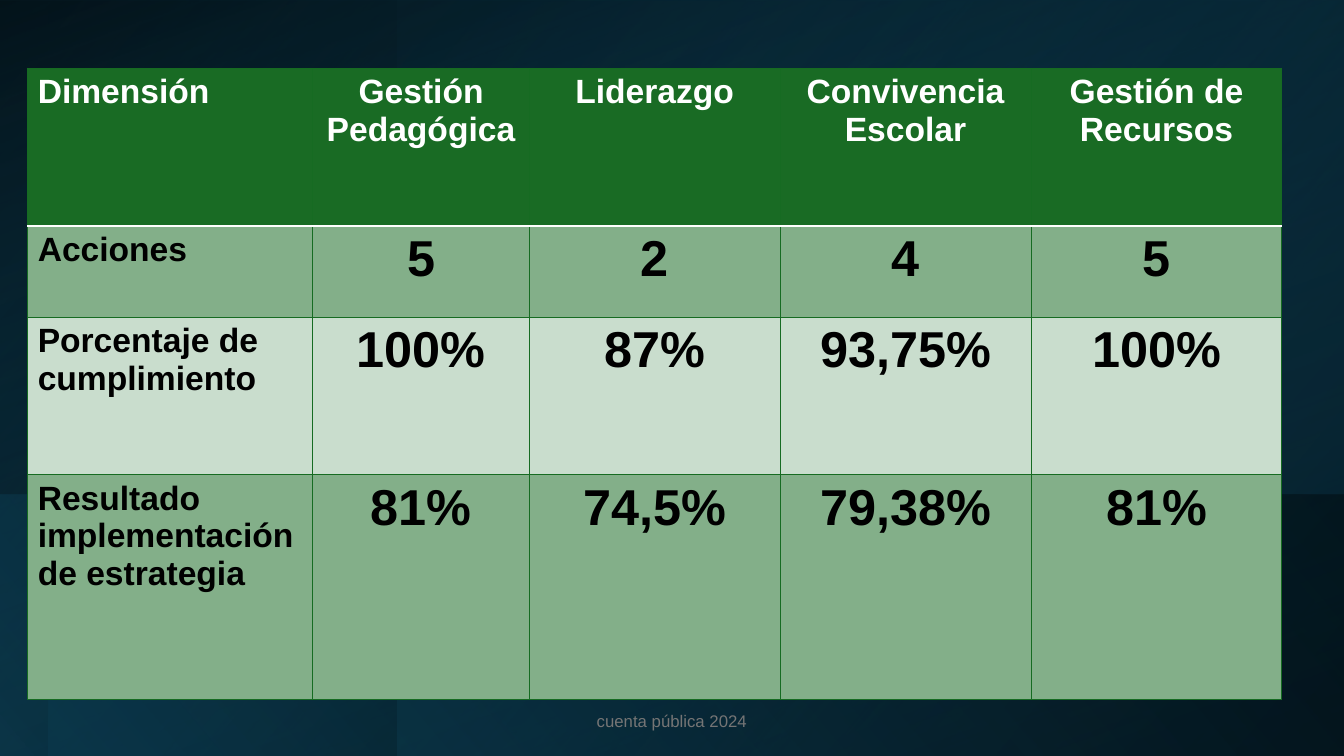
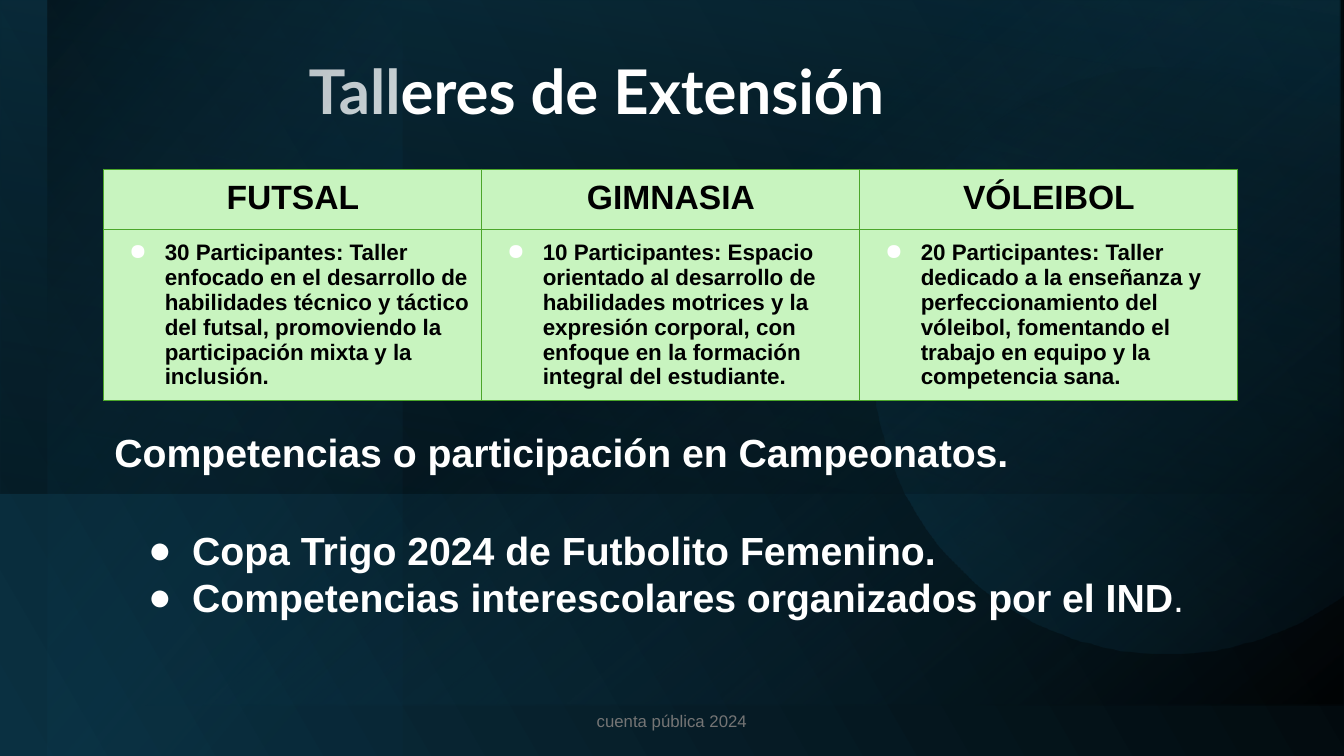
"""Build two slides of a school's public account: management results and extension workshops."""
from dataclasses import dataclass
from math import cos, radians, sin

from lxml.etree import SubElement
from pptx import Presentation
from pptx.dml.color import RGBColor
from pptx.enum.shapes import MSO_SHAPE as Shape
from pptx.enum.text import MSO_ANCHOR as Anchor, MSO_AUTO_SIZE as AutoSize, PP_ALIGN as Align
from pptx.oxml.ns import qn
from pptx.util import Emu, Pt


@dataclass(frozen=True)
class Theme:
    font: str = "Arial"
    title_font: str = "Lato"
    black: str = "000000"
    white: str = "FFFFFF"
    navy: str = "0A3041"
    blue: str = "0F4861"
    teal: str = "156082"
    sky: str = "43AFE2"
    footer: str = "757575"
    green: str = "196B24"
    green_border: str = "166B22"
    green_medium: str = "83AF89"
    green_light: str = "C9DDCD"
    lime: str = "C8F4BF"
    lime_border: str = "4BA62A"
    title_size: int = 44
    figure_size: int = 36
    list_size: int = 28
    label_size: int = 24
    detail_size: int = 16
    footer_size: int = 12


THEME = Theme()
EMU_PER_PX = 9525
WIDTH, HEIGHT = 1280, 720
RECTANGLE, OVAL = Shape.RECTANGLE, Shape.OVAL

RESULTS = [
    ["Dimensión", "Gestión Pedagógica", "Liderazgo", "Convivencia Escolar", "Gestión de Recursos"],
    ["Acciones", "5", "2", "4", "5"],
    ["Porcentaje de cumplimiento", "100%", "87%", "93,75%", "100%"],
    ["Resultado implementación de estrategia", "81%", "74,5%", "79,38%", "81%"],
]
WORKSHOPS = [
    ["FUTSAL", "GIMNASIA", "VÓLEIBOL"],
    [
        "30 Participantes: Taller enfocado en el desarrollo de habilidades técnico y táctico "
        "del futsal, promoviendo la participación mixta y la inclusión.",
        "10 Participantes: Espacio orientado al desarrollo de habilidades motrices y la "
        "expresión corporal, con enfoque en la formación integral del estudiante.",
        "20 Participantes: Taller dedicado a la enseñanza y perfeccionamiento del vóleibol, "
        "fomentando el trabajo en equipo y la competencia sana.",
    ],
]
COMPETITIONS = [
    "Copa Trigo 2024 de Futbolito Femenino.",
    "Competencias interescolares organizados por el IND",
]


def px(value):
    return Emu(round(value * EMU_PER_PX))


def place(shape, box):
    shape.left, shape.top, shape.width, shape.height = map(px, box)


def add_color(parent, color, alpha=100):
    element = SubElement(parent, qn("a:srgbClr"), val=color)
    if alpha < 100:
        SubElement(element, qn("a:alpha"), val=str(alpha * 1000))


def paint_gradient(shape, stops, angle):
    shape.shadow.inherit = False
    shape.line.fill.background()
    shape.fill.background()
    properties = shape._element.spPr
    empty_fill = properties.find(qn("a:noFill"))
    gradient = SubElement(properties, qn("a:gradFill"), rotWithShape="1")
    properties.replace(empty_fill, gradient)
    stop_list = SubElement(gradient, qn("a:gsLst"))
    for position, color, alpha in stops:
        add_color(SubElement(stop_list, qn("a:gs"), pos=str(position * 1000)), color, alpha)
    SubElement(gradient, qn("a:lin"), ang=str(angle * 60000), scaled="0")


def add_glow(slide, box, stops, angle, rotation=0, flip=False, kind=RECTANGLE):
    shape = slide.shapes.add_shape(kind, *map(px, box))
    shape.rotation = rotation
    if flip:
        shape._element.spPr.xfrm.set("flipH", "1")
    paint_gradient(shape, stops, angle)


def add_cut_circle(slide, center, radius, cut_angle, stops, angle):
    points = [
        (round(center[0] + radius * cos(radians(turn))), round(center[1] + radius * sin(radians(turn))))
        for turn in range(cut_angle, 361 - cut_angle, 2)
    ]
    builder = slide.shapes.build_freeform(*points[0], scale=EMU_PER_PX)
    builder.add_line_segments(points[1:], close=True)
    paint_gradient(builder.convert_to_shape(), stops, angle)


def style_runs(paragraph, size, color, bold=True, font=THEME.font):
    for run in paragraph.runs:
        run.font.name = font
        run.font.size = Pt(size)
        run.font.bold = bold
        run.font.color.rgb = RGBColor.from_string(color)


def add_bullet(paragraph, indent, hanging):
    properties = paragraph._p.get_or_add_pPr()
    properties.set("marL", str(px(indent)))
    properties.set("indent", str(-px(hanging)))
    add_color(SubElement(properties, qn("a:buClr")), THEME.white)
    SubElement(properties, qn("a:buChar"), char="●")


def set_insets(target, horizontal, vertical):
    target.margin_left = target.margin_right = px(horizontal)
    target.margin_top = target.margin_bottom = px(vertical)


def prepare_frame(shape, anchor, horizontal, vertical):
    frame = shape.text_frame
    frame.word_wrap = True
    frame.auto_size = AutoSize.NONE
    frame.vertical_anchor = anchor
    set_insets(frame, horizontal, vertical)
    return frame


def add_text(slide, box, text, size, color, bold=True, align=Align.LEFT, anchor=Anchor.TOP):
    frame = prepare_frame(slide.shapes.add_textbox(*map(px, box)), anchor, 10, 10)
    frame.text = text
    paragraph = frame.paragraphs[0]
    paragraph.alignment = align
    style_runs(paragraph, size, color, bold)


def add_footer(slide):
    add_text(slide, (424, 667, 432, 38), "cuenta pública 2024", THEME.footer_size,
             THEME.footer, False, Align.CENTER, Anchor.MIDDLE)


def add_grid(slide, corner, columns, rows):
    frame = slide.shapes.add_table(len(rows), len(columns), *map(px, (*corner, sum(columns), sum(rows))))
    table = frame.table
    table.first_row = table.horz_banding = False
    for column, width in zip(table.columns, columns):
        column.width = px(width)
    for row, height in zip(table.rows, rows):
        row.height = px(height)
    return table


def set_border(cell, side, color, width=0.75):
    line = SubElement(cell._tc.get_or_add_tcPr(), qn(f"a:ln{side}"), w=str(Pt(width)))
    add_color(SubElement(line, qn("a:solidFill")), color)


def fill_cell(cell, text, size, color, fill, border, align, vertical_inset, rules=()):
    cell.text = text
    set_insets(cell, 10, vertical_inset)
    paragraph = cell.text_frame.paragraphs[0]
    paragraph.alignment = align
    style_runs(paragraph, size, color)
    for side in "LRTB":
        if side in rules:
            set_border(cell, side, THEME.white, 2)
        else:
            set_border(cell, side, border)
    cell.fill.solid()
    cell.fill.fore_color.rgb = RGBColor.from_string(fill)
    return paragraph


def add_results_table(slide):
    table = add_grid(slide, (26, 65), (272, 206, 239, 239, 239), (150, 87, 150, 214))
    fills = (THEME.green, THEME.green_medium, THEME.green_light, THEME.green_medium)
    for row, (texts, fill) in enumerate(zip(RESULTS, fills)):
        color = THEME.black if row else THEME.white
        rules = {0: "B", 1: "T"}.get(row, "")
        for column, text in enumerate(texts):
            size = THEME.figure_size if row and column else THEME.label_size
            align = Align.CENTER if column else Align.LEFT
            fill_cell(table.cell(row, column), text, size, color, fill,
                      THEME.green_border, align, 5, rules)


def add_workshops_table(slide):
    table = add_grid(slide, (99, 161), (360, 360, 360), (58, 161))
    for row, texts in enumerate(WORKSHOPS):
        size = THEME.detail_size if row else THEME.label_size
        align = Align.LEFT if row else Align.CENTER
        for column, text in enumerate(texts):
            paragraph = fill_cell(table.cell(row, column), text, size, THEME.black,
                                  THEME.lime, THEME.lime_border, align, 10)
            if row:
                add_bullet(paragraph, 48, 34)


def set_title(slide, text):
    title = slide.shapes.title
    place(title, (284, 35, 756, 92))
    frame = prepare_frame(title, Anchor.BOTTOM, 10, 5)
    frame.text = text
    paragraph = frame.paragraphs[0]
    paragraph.alignment = Align.LEFT
    paragraph.line_spacing = 0.9
    style_runs(paragraph, THEME.title_size, THEME.white, font=THEME.title_font)
    slide.shapes._spTree.append(title._element)


def set_competitions(slide):
    body = slide.placeholders[1]
    place(body, (125, 491, 1045, 108))
    frame = prepare_frame(body, Anchor.TOP, 10, 10)
    frame.text = "\n".join(COMPETITIONS)
    for paragraph in frame.paragraphs:
        paragraph.space_before = Pt(0)
        style_runs(paragraph, THEME.list_size, THEME.white)
        add_bullet(paragraph, 48, 42)
    last = frame.paragraphs[-1]
    last.add_run().text = "."
    style_runs(last, THEME.list_size, THEME.white)
    last.runs[-1].font.bold = False
    slide.shapes._spTree.append(body._element)


def fade(first, first_alpha, position, second, second_alpha):
    stops = [(0, first, first_alpha), (position, second, second_alpha)]
    return stops if position == 100 else stops + [(100, second, second_alpha)]


def late_fade(start, end, alpha):
    return [(0, start, 0), (3, start, 0), (100, end, alpha)]


def build_results(presentation):
    slide = presentation.slides.add_slide(presentation.slide_layouts[6])
    black, blue, navy, teal, sky = THEME.black, THEME.blue, THEME.navy, THEME.teal, THEME.sky
    add_glow(slide, (-1, 0, 1284, 721), fade(black, 100, 100, blue, 100), 70, 180)
    add_glow(slide, (46, 0, 1236, 721), [(0, navy, 83), (21, navy, 83), (100, teal, 0)], 140, 180, True)
    add_glow(slide, (-2, 0, 380, 721), fade(blue, 0, 99, black, 41), 220, 180)
    add_glow(slide, (-2, 0, 1284, 721), late_fade(blue, black, 73), 290, 0, True)
    add_glow(slide, (470, -90, 720, 902), late_fade(blue, black, 27), 230, 90, True)
    add_glow(slide, (125, 114, 521, 524), fade(teal, 26, 85, sky, 0), 240, 99.9, kind=OVAL)
    add_glow(slide, (0, 471, 1283, 250), fade(blue, 50, 99, black, 34), 220, 0, True)
    add_footer(slide)
    add_results_table(slide)


def build_workshops(presentation):
    slide = presentation.slides.add_slide(presentation.slide_layouts[1])
    black, blue, navy, teal = THEME.black, THEME.blue, THEME.navy, THEME.teal
    add_glow(slide, (0, 0, WIDTH, HEIGHT), fade(navy, 100, 100, black, 100), 150, 180)
    add_cut_circle(slide, (1111, 343), 279, 53,
                   [(0, black, 41), (16, black, 41), (85, teal, 25), (100, teal, 25)], 113)
    add_glow(slide, (0, 0, 1277, 470), fade(blue, 50, 99, black, 34), 260, 180, True)
    add_glow(slide, (1, 0, 1279, 672),
             [(0, blue, 0), (45, blue, 0), (99, black, 68), (100, black, 68)], 230, 180)
    set_title(slide, "Talleres de Extensión")
    add_glow(slide, (45, 0, 338, HEIGHT), fade(black, 41, 86, teal, 3), 40)
    add_footer(slide)
    add_workshops_table(slide)
    add_text(slide, (99, 398, 896, 60), "Competencias o participación en Campeonatos.",
             THEME.list_size, THEME.white)
    set_competitions(slide)


def main():
    presentation = Presentation()
    presentation.slide_width, presentation.slide_height = px(WIDTH), px(HEIGHT)
    build_results(presentation)
    build_workshops(presentation)
    presentation.save("out.pptx")


if __name__ == "__main__":
    main()
